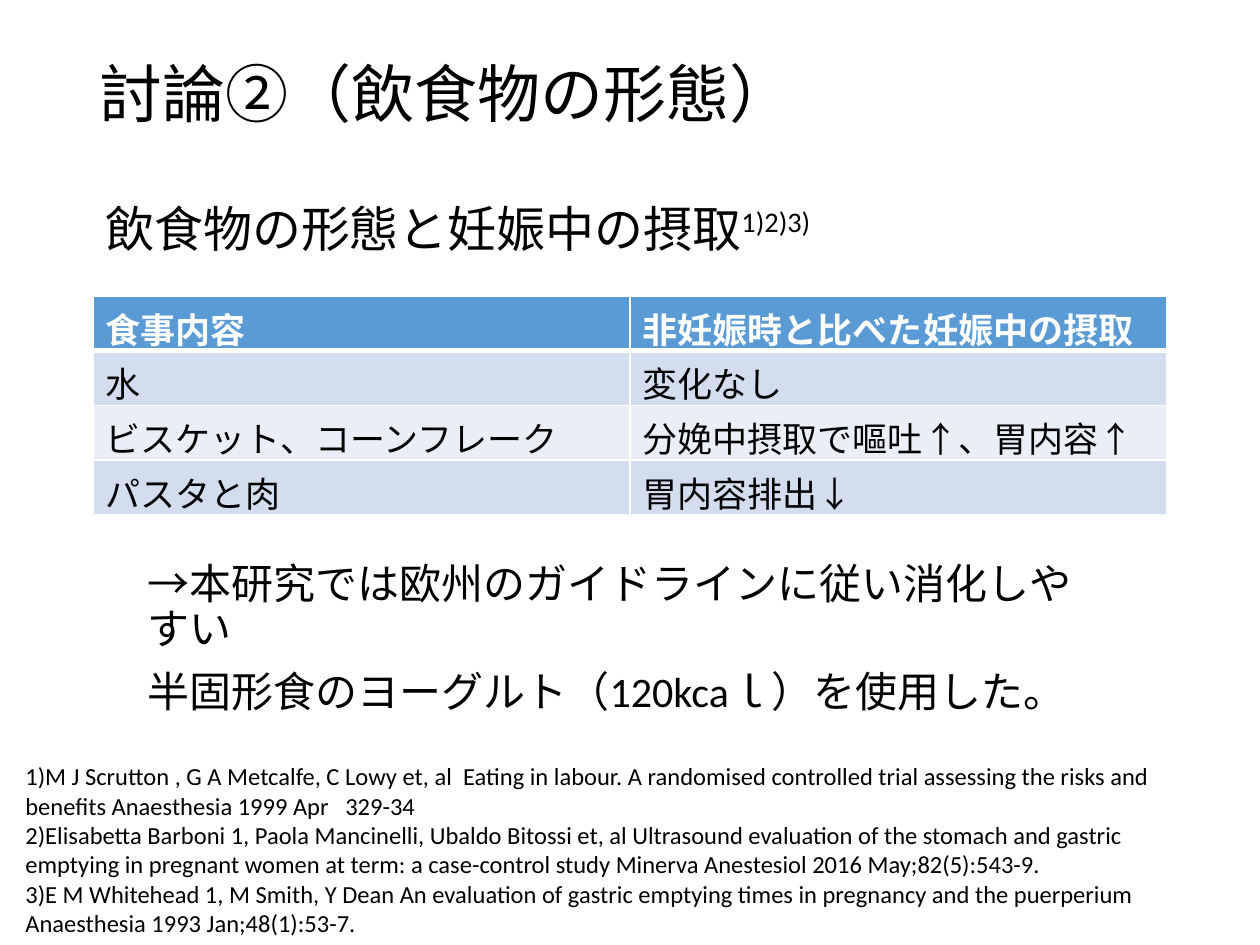
from lxml import etree
from pptx import Presentation, util as u
from pptx.dml.color import RGBColor
from pptx.enum import text
from pptx.oxml import ns

BLACK = RGBColor(0x00, 0x00, 0x00)
WHITE = RGBColor(0xFF, 0xFF, 0xFF)
HEADER = RGBColor(0x5B, 0x9B, 0xD5)
BAND_DARK = RGBColor(0xD2, 0xDE, 0xEF)
BAND_LIGHT = RGBColor(0xEA, 0xEF, 0xF7)
PX = 914400 / 126


def box(*lengths):
    return [u.Emu(round(n * PX)) for n in lengths]


def write(tf, paragraphs, size, color=BLACK, bold=False, line=1.0, before=0, sup=None):
    tf.word_wrap = True
    for i, words in enumerate(paragraphs):
        p = tf.paragraphs[0] if i == 0 else tf.add_paragraph()
        p.alignment = text.PP_ALIGN.LEFT
        p.line_spacing, p.space_before = line, u.Pt(before)
        for part in [words, sup] if sup else [words]:
            r = p.add_run()
            r.text = part
            r.font.name, r.font.size, r.font.bold = "Calibri", u.Pt(size), bold
            r.font.color.rgb = color
            if part == sup:
                r._r.get_or_add_rPr().set("baseline", "30000")


prs = Presentation()
prs.slide_width, prs.slide_height = box(1260, 945)
s = prs.slides.add_slide(prs.slide_layouts[1])

# Title
title = s.shapes.title
title.left, title.top, title.width, title.height = box(87, 50, 1086, 95)
title.text_frame.vertical_anchor = text.MSO_ANCHOR.MIDDLE
write(title.text_frame, ["討論②（飲食物の形態）"], 36, line=0.9)

# Conclusion, without bullets
body = s.placeholders[1]
body.left, body.top, body.width, body.height = box(135, 557, 990, 155)
write(body.text_frame, [
    "→本研究では欧州のガイドラインに従い消化しやすい",
    "半固形食のヨーグルト（120kcaｌ）を使用した。",
], 24, line=0.9, before=10)
for p in body.text_frame.paragraphs:
    pPr = p._p.get_or_add_pPr()
    pPr.set("marL", "0")
    pPr.set("indent", "0")
    etree.SubElement(pPr, ns.qn("a:buNone"))

# References
refs = s.shapes.add_textbox(*box(13, 755, 1197, 190))
write(refs.text_frame, [
    "1)M J Scrutton , G A Metcalfe, C Lowy et, al  Eating in labour. A randomised "
    "controlled trial assessing the risks and benefits Anaesthesia 1999 Apr   329-34",
    "2)Elisabetta Barboni 1, Paola Mancinelli, Ubaldo Bitossi et, al Ultrasound "
    "evaluation of the stomach and gastric emptying in pregnant women at term: "
    "a case-control study Minerva Anestesiol 2016 May;82(5):543-9.",
    "3)E M Whitehead 1, M Smith, Y Dean An evaluation of gastric emptying times in "
    "pregnancy and the puerperium Anaesthesia 1993 Jan;48(1):53-7.",
], 14)

# Intake table
rows = [
    ("食事内容", "非妊娠時と比べた妊娠中の摂取"),
    ("水", "変化なし"),
    ("ビスケット、コーンフレーク", "分娩中摂取で嘔吐↑、胃内容↑"),
    ("パスタと肉", "胃内容排出↓"),
]
table = s.shapes.add_table(len(rows), 2, *box(93, 296, 1074, 208)).table
for i, row in enumerate(rows):
    head = i == 0
    for j, words in enumerate(row):
        cell = table.cell(i, j)
        write(cell.text_frame, [words], 20, color=WHITE if head else BLACK, bold=head)
        tcPr = cell._tc.get_or_add_tcPr()
        for side in "LRTB":
            thick = (head and side == "B") or (i == 1 and side == "T")
            ln = etree.SubElement(tcPr, ns.qn(f"a:ln{side}"), w=str(u.Pt(3 if thick else 1)))
            fill = etree.SubElement(ln, ns.qn("a:solidFill"))
            etree.SubElement(fill, ns.qn("a:srgbClr"), val=str(WHITE))
        cell.fill.solid()
        cell.fill.fore_color.rgb = HEADER if head else BAND_DARK if i % 2 else BAND_LIGHT

# Table heading
heading = s.shapes.add_textbox(*box(93, 192, 742, 72))
write(heading.text_frame, ["飲食物の形態と妊娠中の摂取"], 28, sup="1)2)3)")

prs.save("out.pptx")
